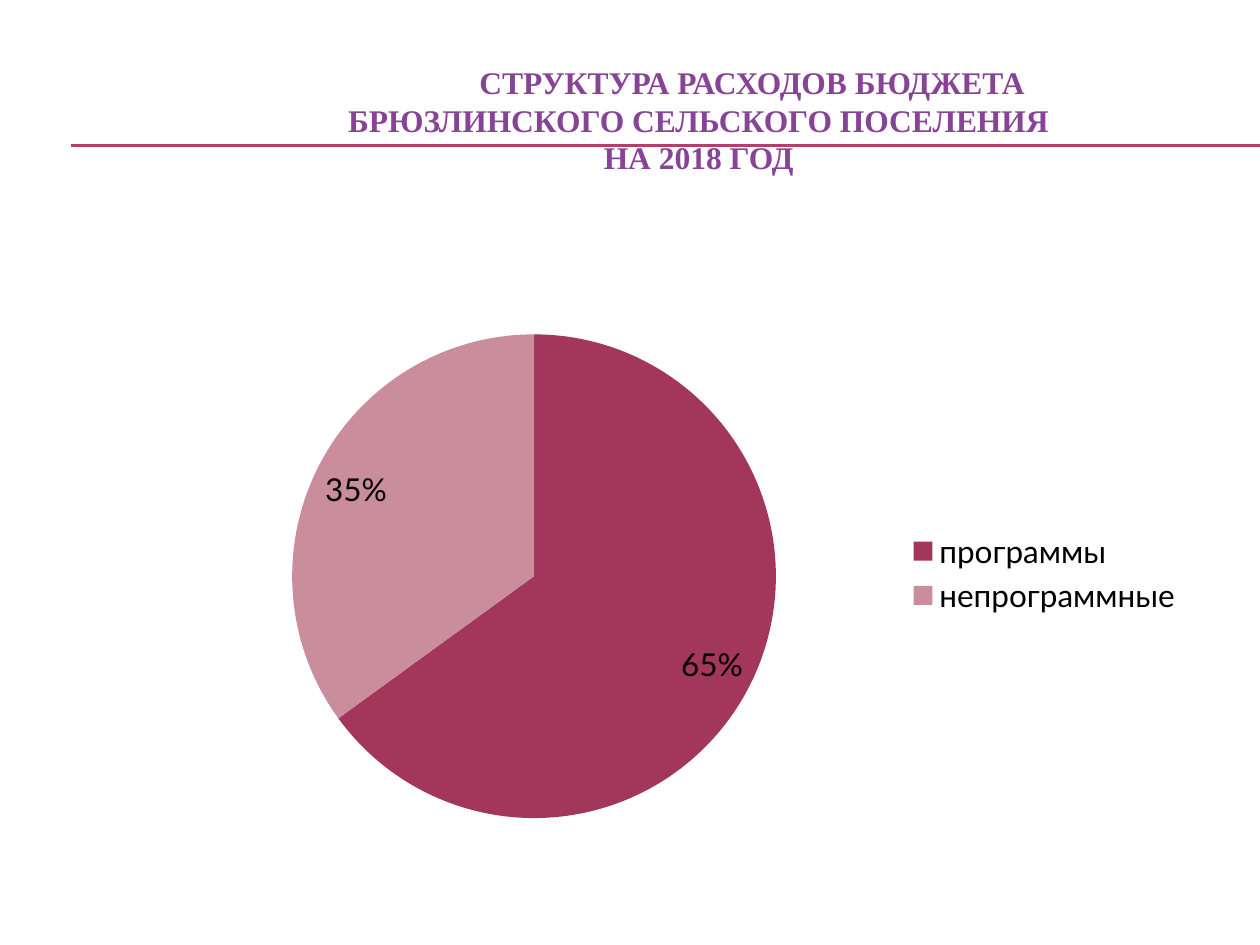
from lxml.etree import SubElement
from pptx import Presentation
from pptx.chart.data import CategoryChartData
from pptx.dml.color import RGBColor
from pptx.enum.chart import XL_CHART_TYPE, XL_LABEL_POSITION, XL_LEGEND_POSITION
from pptx.enum.shapes import MSO_CONNECTOR
from pptx.enum.text import MSO_ANCHOR, MSO_AUTO_SIZE, PP_ALIGN
from pptx.oxml.ns import qn
from pptx.util import Inches, Pt

COLORS = {
    "title": "874396",
    "rule": "B83D68",
    "program": "A2365B",
    "other": "CA8D9B",
    "text": "000000",
}
TITLE_LINES = [
    "СТРУКТУРА РАСХОДОВ БЮДЖЕТА",
    "БРЮЗЛИНСКОГО СЕЛЬСКОГО ПОСЕЛЕНИЯ",
    "НА 2018 ГОД",
]
SHARES = {"программы": 0.65, "непрограммные": 0.35}


def color(name):
    return RGBColor.from_string(COLORS[name])


def format_font(font, name="Lato", size=18, bold=False, fill="text"):
    font.name, font.size, font.bold = name, Pt(size), bold
    font.color.rgb = color(fill)


def write_text(paragraph, text, align=PP_ALIGN.CENTER, indent=0, **font_format):
    paragraph.alignment = align
    paragraph.space_before = Pt(0)
    paragraph._p.get_or_add_pPr().set("marL", str(Inches(indent)))
    run = paragraph.add_run()
    run.text = text
    format_font(run.font, **font_format)


def add_rules(slide, left, top, width, gap=0.01, count=2):
    for index in range(count):
        y = Inches(top + index * gap)
        rule = slide.shapes.add_connector(
            MSO_CONNECTOR.STRAIGHT, Inches(left), y, Inches(left + width), y)
        rule.line.color.rgb = color("rule")
        rule.line.width = Pt(0.75)
        SubElement(rule._element.spPr, qn("a:effectLst"))


def place_title(slide, left, top, width, height):
    title = slide.shapes.title
    title.left, title.top = Inches(left), Inches(top)
    title.width, title.height = Inches(width), Inches(height)
    frame = title.text_frame
    frame.word_wrap = True
    frame.auto_size = MSO_AUTO_SIZE.NONE
    frame.vertical_anchor = MSO_ANCHOR.MIDDLE
    for index, line in enumerate(TITLE_LINES):
        paragraph = frame.add_paragraph() if index else frame.paragraphs[0]
        paragraph.line_spacing = Pt(21.4)
        # The first line is shifted to the right of the others
        write_text(paragraph, line, indent=0.05 if index else 0.9,
                   name="Times New Roman", bold=True, fill="title")
    # Bring the title in front of the rules
    slide.shapes._spTree.append(title._element)


def set_plot_layout(chart, x, y, w, h):
    plot_area = chart._chartSpace.chart.plotArea
    layout = plot_area.find(qn("c:layout"))
    if layout is None:
        layout = SubElement(plot_area, qn("c:layout"))
        plot_area.insert(0, layout)
    manual = SubElement(layout, qn("c:manualLayout"))
    settings = {"layoutTarget": "inner", "xMode": "edge", "yMode": "edge",
                "x": x, "y": y, "w": w, "h": h}
    for tag, value in settings.items():
        SubElement(manual, qn(f"c:{tag}")).set("val", str(value))


def add_share_chart(slide, left, top, width, height):
    data = CategoryChartData(number_format="0%")
    data.categories = list(SHARES)
    data.add_series("Series 1", list(SHARES.values()))
    chart = slide.shapes.add_chart(
        XL_CHART_TYPE.PIE, Inches(left), Inches(top),
        Inches(width), Inches(height), data).chart
    chart.has_title = False
    format_font(chart.font)
    set_plot_layout(chart, 0.13, 0.1, 0.47, 0.81)

    # Legend
    chart.has_legend = True
    chart.legend.position = XL_LEGEND_POSITION.RIGHT
    chart.legend.include_in_layout = False
    format_font(chart.legend.font)

    # Slices and their labels
    plot = chart.plots[0]
    plot.vary_by_categories = True
    for index, name in enumerate(("program", "other")):
        point = plot.series[0].points[index]
        point.format.fill.solid()
        point.format.fill.fore_color.rgb = color(name)
        point.format.line.fill.background()
    plot.has_data_labels = True
    labels = plot.data_labels
    labels.show_value = True
    labels.show_percentage = False
    labels.number_format, labels.number_format_is_linked = "0%", False
    labels.position = XL_LABEL_POSITION.INSIDE_END
    format_font(labels.font)


def main():
    presentation = Presentation()
    presentation.slide_width, presentation.slide_height = Inches(10), Inches(7.5)
    slide = presentation.slides.add_slide(presentation.slide_layouts[5])
    add_rules(slide, 0.56, 1.15, 9.44)
    place_title(slide, 1.54, 0.44, 7.96, 1.02)
    add_share_chart(slide, 1.22, 2.18, 8.27, 4.74)
    presentation.save("out.pptx")


if __name__ == "__main__":
    main()
